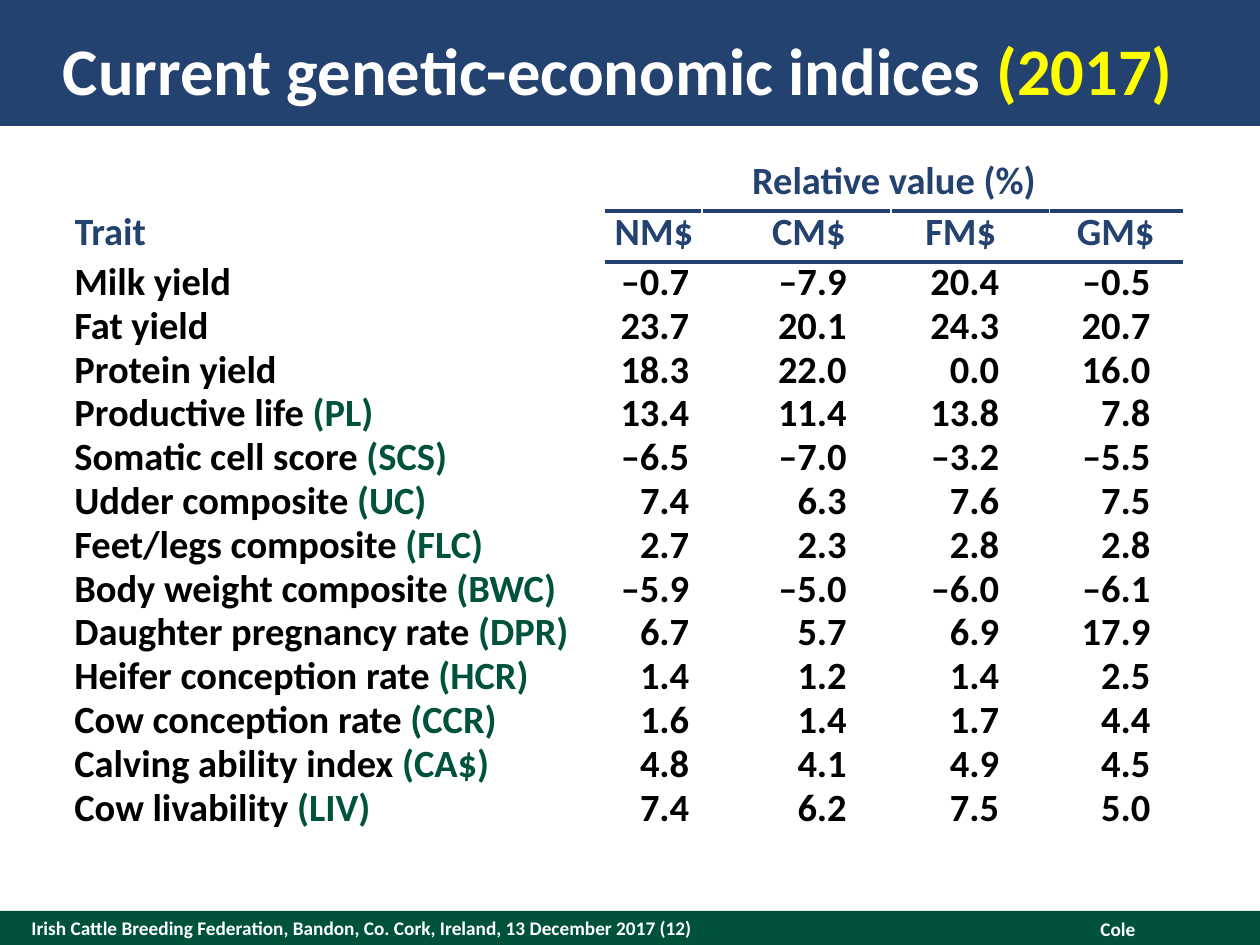
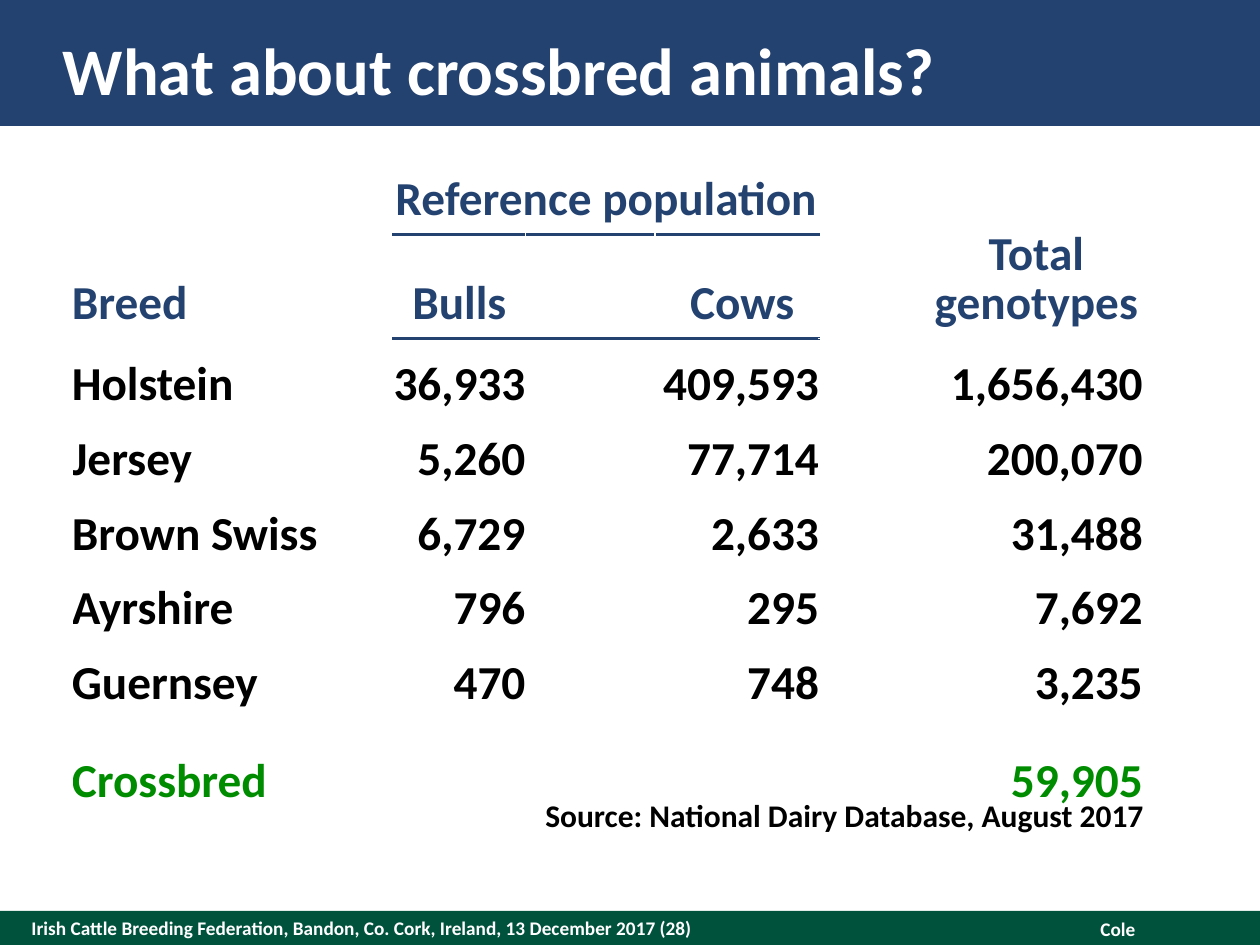
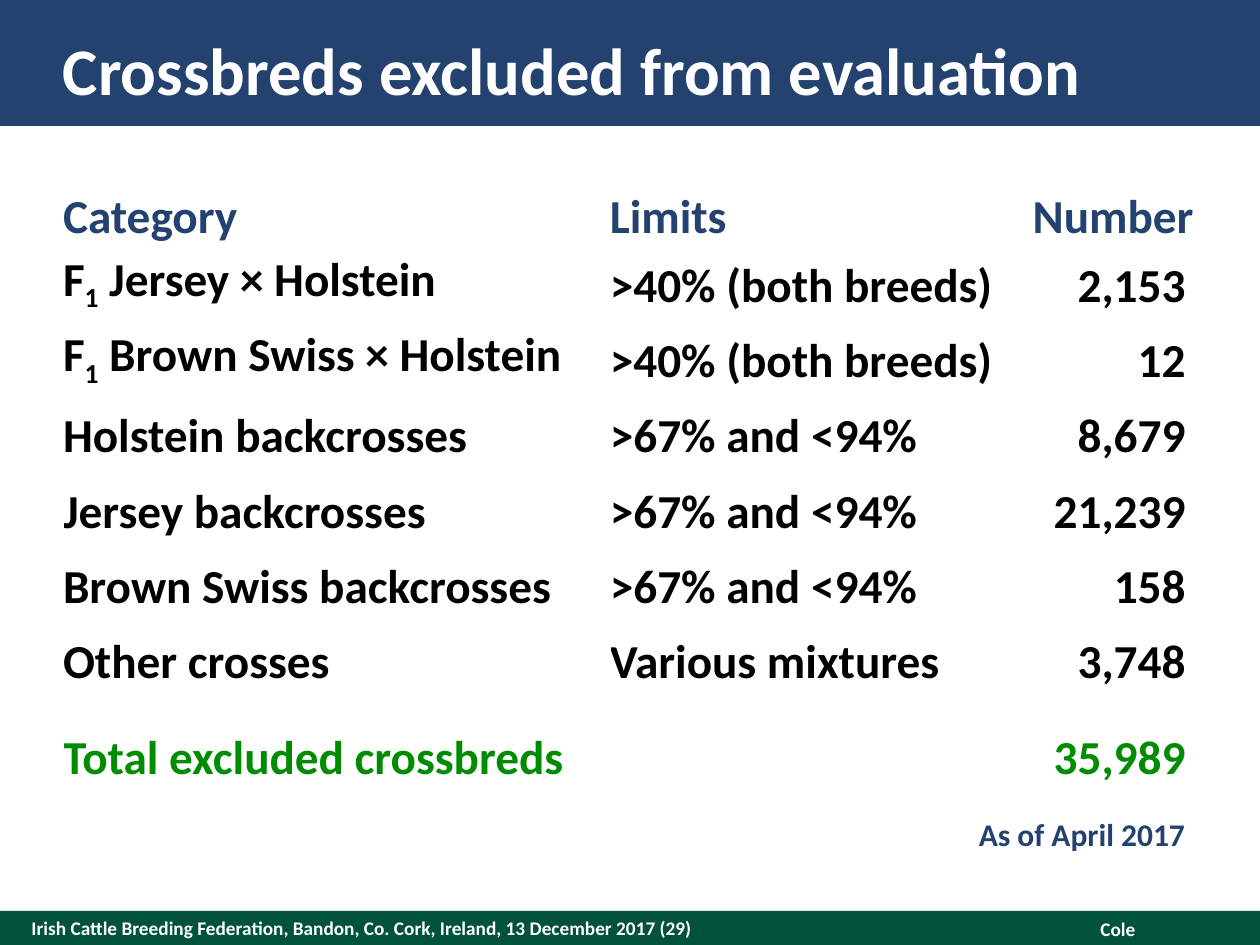
from dataclasses import dataclass
from typing import NamedTuple

from lxml.etree import SubElement
from pptx import Presentation
from pptx.dml.color import RGBColor
from pptx.enum.shapes import MSO_SHAPE
from pptx.enum.text import MSO_ANCHOR, MSO_AUTO_SIZE, PP_ALIGN
from pptx.oxml.ns import qn
from pptx.util import Inches, Pt

# Shared look
FONT = "Calibri"
NAVY, GREEN, LIME = "244270", "00523C", "008C00"
WHITE, BLACK, YELLOW = "FFFFFF", "000000", "FFFF00"
LEFT, CENTER, RIGHT = PP_ALIGN.LEFT, PP_ALIGN.CENTER, PP_ALIGN.RIGHT
TOP, MIDDLE, BOTTOM = MSO_ANCHOR.TOP, MSO_ANCHOR.MIDDLE, MSO_ANCHOR.BOTTOM

# Grid of 100 columns by 75 rows
WIDTH, HEIGHT = Inches(10), Inches(7.5)
COLUMNS, ROWS = 100, 75
FOOTER_TOP, FOOTER_ROWS = 72.3, 2.7
HEAD_GAP = 0.5


class Area(NamedTuple):
    left: float
    top: float
    width: float
    height: float


class Insets(NamedTuple):
    left: float = 0
    top: float = 0
    right: float = 0
    bottom: float = 0


class Run(NamedTuple):
    text: str
    color: str | None = None
    subscript: bool = False


@dataclass
class Column:
    width: float
    head: str = ""
    align: PP_ALIGN = RIGHT
    left: float = 0
    right: float = 0
    head_align: PP_ALIGN = CENTER
    head_left: float = 0
    head_right: float = 0


@dataclass
class Grid:
    left: float
    top: float
    columns: list[Column]
    heights: list[float]
    size: float
    leading: float
    head_leading: float | None = None
    body_anchor: MSO_ANCHOR = TOP
    total_leading: float | None = None


Text = str | list[Run]


def across(columns: float) -> int:
    return round(WIDTH * columns / COLUMNS)


def down(rows: float) -> int:
    return round(HEIGHT * rows / ROWS)


def place(area: Area) -> tuple[int, int, int, int]:
    return across(area.left), down(area.top), across(area.width), down(area.height)


def rgb(color: str) -> RGBColor:
    return RGBColor.from_string(color)


def write(frame, text: Text, *, size: float, color: str = BLACK,
          align: PP_ALIGN = LEFT, leading: float | None = None) -> None:
    """Fill a text frame; each line of a string becomes a paragraph."""
    lines = [[Run(line)] for line in text.split("\n")] if isinstance(text, str) else [text]
    for number, line in enumerate(lines):
        paragraph = frame.add_paragraph() if number else frame.paragraphs[0]
        paragraph.alignment = align
        if leading:
            paragraph.line_spacing = Pt(leading)
        for part in line:
            run = paragraph.add_run()
            run.text = part.text
            run.font.name, run.font.size, run.font.bold = FONT, Pt(size), True
            run.font.color.rgb = rgb(part.color or color)
            if part.subscript:
                run._r.get_or_add_rPr().set("baseline", "-25000")


def set_insets(target, insets: Insets) -> None:
    target.margin_left, target.margin_right = across(insets.left), across(insets.right)
    target.margin_top, target.margin_bottom = down(insets.top), down(insets.bottom)


def add_label(slide, area: Area, text: Text, *, insets: Insets = Insets(),
              anchor: MSO_ANCHOR = MIDDLE, wrap: bool = True, **style) -> None:
    frame = slide.shapes.add_textbox(*place(area)).text_frame
    frame.word_wrap, frame.vertical_anchor = wrap, anchor
    if not wrap:
        frame.auto_size = MSO_AUTO_SIZE.SHAPE_TO_FIT_TEXT
    set_insets(frame, insets)
    write(frame, text, **style)


def add_note(slide, area: Area, text: str, color: str) -> None:
    add_label(slide, area, text, insets=Insets(1, 0.5, 1, 0.5), anchor=TOP,
              wrap=False, size=18, color=color)


def add_band(slide, top: float, height: float, color: str) -> None:
    band = slide.shapes.add_shape(MSO_SHAPE.RECTANGLE, *place(Area(0, top, COLUMNS, height)))
    band.shadow.inherit = False
    band.fill.solid()
    band.fill.fore_color.rgb = rgb(color)
    band.line.fill.background()


def add_page(deck, title: Text, number: int):
    """A blank slide with the title band and the footer."""
    slide = deck.slides.add_slide(deck.slide_layouts[6])
    add_band(slide, FOOTER_TOP, FOOTER_ROWS, GREEN)
    add_band(slide, 0, 10, NAVY)
    add_label(slide, Area(2.5, FOOTER_TOP, 70, FOOTER_ROWS),
              "Irish Cattle Breeding Federation, Bandon, Co. Cork, Ireland, "
              f"13 December 2017 ({number})", size=11, color=WHITE)
    add_label(slide, Area(71.1, FOOTER_TOP, 20, 2.9), "Cole", anchor=TOP,
              insets=Insets(1, 0.5, 1, 0.5), size=11, color=WHITE, align=RIGHT)
    add_label(slide, Area(5, 2, 90, 7), title, size=38, color=WHITE)
    return slide


def add_grid(slide, grid: Grid):
    """An unfilled table with tight cells."""
    area = Area(grid.left, grid.top, sum(c.width for c in grid.columns), sum(grid.heights))
    table = slide.shapes.add_table(len(grid.heights), len(grid.columns), *place(area)).table
    table.first_row = table.horz_banding = False
    for target, column in zip(table.columns, grid.columns):
        target.width = across(column.width)
    for target, height in zip(table.rows, grid.heights):
        target.height = down(height)
    for cell in table.iter_cells():
        cell.fill.background()
        set_insets(cell, Insets())
    return table


def fill_head(cell, grid: Grid, text: str, insets: Insets, align: PP_ALIGN,
              anchor: MSO_ANCHOR = BOTTOM, leading: float | None = None) -> None:
    cell.vertical_anchor = anchor
    set_insets(cell, insets)
    write(cell.text_frame, text, size=grid.size, color=NAVY, align=align,
          leading=leading or grid.head_leading)


def fill_body(table, grid: Grid, first_row: int, records: list, has_total: bool = False) -> None:
    for index, record in enumerate(records):
        is_total = has_total and index == len(records) - 1
        for position, (column, text) in enumerate(zip(grid.columns, record)):
            if not text:
                continue
            cell = table.cell(first_row + index, position)
            cell.vertical_anchor = grid.body_anchor
            set_insets(cell, Insets(left=column.left, right=column.right))
            write(cell.text_frame, text, size=grid.size, align=column.align,
                  color=LIME if is_total else BLACK,
                  leading=grid.total_leading if is_total else grid.leading)


def rule_under_span(table, first: int, last: int) -> None:
    """Draw the line between the spanning head and its column heads."""
    for position in range(first, last + 1):
        for row, side in enumerate(("a:lnB", "a:lnT")):
            properties = table.cell(row, position)._tc.get_or_add_tcPr()
            line = SubElement(properties, qn(side), w=str(Pt(2.25)))
            properties.insert(0, line)
            SubElement(SubElement(line, qn("a:solidFill")), qn("a:srgbClr"), val=NAVY)


def add_two_row_head(table, grid: Grid, span_head: str, first: int, last: int,
                     sub_leading: float) -> None:
    """Columns first to last share a ruled head; the others are two rows tall."""
    table.cell(0, first).merge(table.cell(0, last))
    fill_head(table.cell(0, first), grid, span_head, Insets(bottom=HEAD_GAP), CENTER)
    for position, column in enumerate(grid.columns):
        is_sub = first <= position <= last
        cell = table.cell(int(is_sub), position)
        if not is_sub:
            cell.merge(table.cell(1, position))
        if column.head:
            insets = Insets(column.head_left, HEAD_GAP if is_sub else 0,
                            column.head_right, HEAD_GAP)
            fill_head(cell, grid, column.head, insets, column.head_align,
                      leading=sub_leading if is_sub else None)
    rule_under_span(table, first, last)


# Slide 1: weights of the traits in each index
TRAITS = [
    ("Milk yield", "", "–0.7", "–7.9", "20.4", "–0.5"),
    ("Fat yield", "", "23.7", "20.1", "24.3", "20.7"),
    ("Protein yield", "", "18.3", "22.0", "0.0", "16.0"),
    ("Productive life", "PL", "13.4", "11.4", "13.8", "7.8"),
    ("Somatic cell score", "SCS", "–6.5", "–7.0", "–3.2", "–5.5"),
    ("Udder composite", "UC", "7.4", "6.3", "7.6", "7.5"),
    ("Feet/legs composite", "FLC", "2.7", "2.3", "2.8", "2.8"),
    ("Body weight composite", "BWC", "–5.9", "–5.0", "–6.0", "–6.1"),
    ("Daughter pregnancy rate", "DPR", "6.7", "5.7", "6.9", "17.9"),
    ("Heifer conception rate", "HCR", "1.4", "1.2", "1.4", "2.5"),
    ("Cow conception rate", "CCR", "1.6", "1.4", "1.7", "4.4"),
    ("Calving ability index", "CA$", "4.8", "4.1", "4.9", "4.5"),
    ("Cow livability", "LIV", "7.4", "6.2", "7.5", "5.0"),
]


def trait_name(name: str, short: str) -> list[Run]:
    return [Run(name)] + ([Run(f" ({short})", GREEN)] if short else [])


def build_indices(deck) -> None:
    slide = add_page(deck, [Run("Current genetic-economic indices "), Run("(2017)", YELLOW)], 12)
    grid = Grid(5.9, 12.9, [
        Column(42.2, "Trait", LEFT, head_align=LEFT),
        Column(7.6, "NM$", right=1),
        Column(15, "CM$", left=1, right=3.5, head_left=2),
        Column(12.6, "FM$", right=4, head_right=1.5),
        Column(10.5, "GM$", right=2.5),
    ], [3.83, 4.06] + [3.47] * len(TRAITS), size=22, leading=25, head_leading=24)
    table = add_grid(slide, grid)
    add_two_row_head(table, grid, "Relative value (%)", 1, 4, sub_leading=22)
    records = [(trait_name(name, short), *values) for name, short, *values in TRAITS]
    fill_body(table, grid, 2, records)


# Slide 2: animals by breed
BREEDS = [
    ("Holstein", "36,933", "", "409,593", "", "1,656,430"),
    ("Jersey", "5,260", "", "77,714", "", "200,070"),
    ("Brown Swiss", "6,729", "", "2,633", "", "31,488"),
    ("Ayrshire", "796", "", "295", "", "7,692"),
    ("Guernsey", "470", "", "748", "", "3,235"),
    ("Crossbred", "", "", "", "", "59,905"),
]


def build_breeds(deck) -> None:
    slide = add_page(deck, "What about crossbred animals?", 28)
    grid = Grid(5.7, 12.9, [
        Column(25.5, "Breed", LEFT, head_align=LEFT),
        Column(10.5, "Bulls"),
        Column(10.3),
        Column(13, "Cows", head_left=0.8),
        Column(8.8),
        Column(16.9, "Total\ngenotypes"),
    ], [5.7, 6.2] + [5.93] * 5 + [7.8], size=27, leading=32, head_leading=28,
        body_anchor=BOTTOM, total_leading=42)
    table = add_grid(slide, grid)
    add_two_row_head(table, grid, "Reference population", 1, 3, sub_leading=28)
    fill_body(table, grid, 2, BREEDS, has_total=True)
    add_note(slide, Area(42.3, 62.7, 50, 4), "Source: National Dairy Database, August 2017", BLACK)


# Slide 3: crossbreds left out
def first_cross(breeds: str) -> list[Run]:
    return [Run("F"), Run("1", subscript=True), Run(f" {breeds}")]


BOTH, BACKCROSS = ">40% (both breeds)", ">67% and <94%"
EXCLUDED = [
    (first_cross("Jersey × Holstein"), BOTH, "2,153"),
    (first_cross("Brown Swiss × Holstein"), BOTH, "12"),
    ("Holstein backcrosses", BACKCROSS, "8,679"),
    ("Jersey backcrosses", BACKCROSS, "21,239"),
    ("Brown Swiss backcrosses", BACKCROSS, "158"),
    ("Other crosses", "Various mixtures", "3,748"),
    ("Total excluded crossbreds", "", "35,989"),
]


def build_excluded(deck) -> None:
    slide = add_page(deck, "Crossbreds excluded from evaluation", 29)
    grid = Grid(5, 15, [
        Column(43.4, "Category", LEFT, head_align=LEFT),
        Column(33.4, "Limits", LEFT, head_align=LEFT),
        Column(13.1, "Number", right=0.8),
    ], [5] + [5.97] * 6 + [8.9], size=27, leading=36, total_leading=48)
    table = add_grid(slide, grid)
    for position, column in enumerate(grid.columns):
        fill_head(table.cell(0, position), grid, column.head, Insets(bottom=HEAD_GAP),
                  column.head_align, TOP)
    fill_body(table, grid, 1, EXCLUDED, has_total=True)
    add_note(slide, Area(76.7, 64.2, 18.6, 4), "As of April 2017", NAVY)


def main() -> None:
    deck = Presentation()
    deck.slide_width, deck.slide_height = WIDTH, HEIGHT
    for build in (build_indices, build_breeds, build_excluded):
        build(deck)
    deck.save("out.pptx")


if __name__ == "__main__":
    main()
